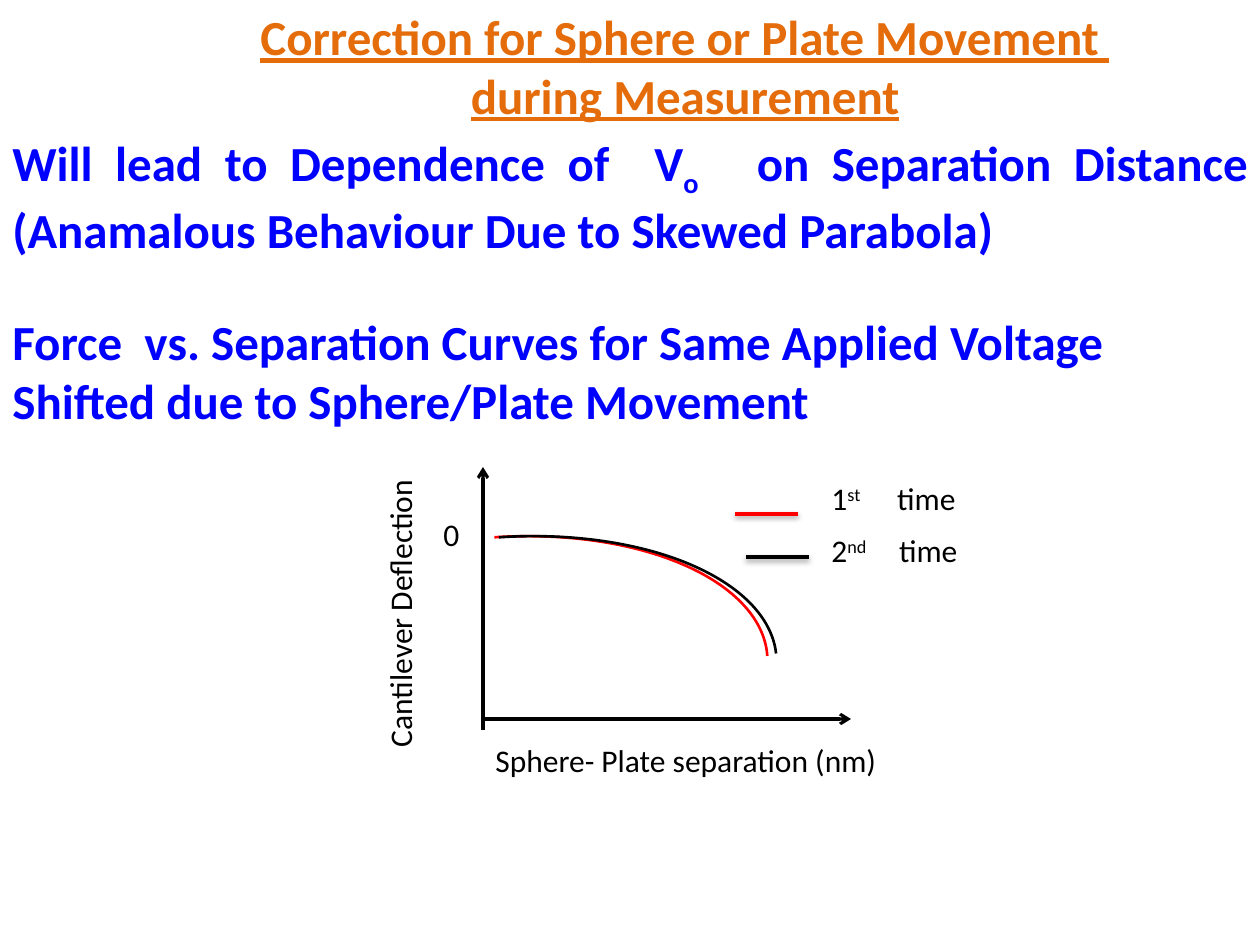
from lxml.etree import SubElement
from pptx import Presentation
from pptx.dml.color import RGBColor
from pptx.enum.shapes import MSO_CONNECTOR, MSO_SHAPE
from pptx.enum.text import MSO_ANCHOR, MSO_AUTO_SIZE, PP_ALIGN
from pptx.oxml.ns import qn
from pptx.util import Inches, Pt

ORANGE = RGBColor(0xE4, 0x6C, 0x0A)
BLUE = RGBColor(0x00, 0x00, 0xFF)
RED = RGBColor(0xFF, 0x00, 0x00)
BLACK = RGBColor(0x00, 0x00, 0x00)
WHITE = RGBColor(0xFF, 0xFF, 0xFF)
SCALE = Inches(10) / 1260


def write(box, paragraphs, size, color, bold=False, align=PP_ALIGN.LEFT, wrap=False):
    frame = box.text_frame
    frame.auto_size = MSO_AUTO_SIZE.NONE
    frame.word_wrap = wrap
    frame.vertical_anchor = MSO_ANCHOR.TOP
    for index, spans in enumerate(paragraphs):
        para = frame.add_paragraph() if index else frame.paragraphs[0]
        para.alignment = align
        for text, baseline in spans:
            span = para.add_run()
            span.text = text
            span.font.name = "Calibri"
            span.font.size = Pt(size)
            span.font.bold = bold
            span.font.color.rgb = color
            if baseline:
                span._r.get_or_add_rPr().set("baseline", str(baseline * 1000))


def draw_line(ends, color, width):
    line = slide.shapes.add_connector(
        MSO_CONNECTOR.STRAIGHT, *[round(end * SCALE) for end in ends])
    line.line.color.rgb = color
    line.line.width = Pt(width)
    effects = SubElement(line._element.spPr, qn("a:effectLst"))
    return line, effects


deck = Presentation()
deck.slide_width = Inches(10)
deck.slide_height = Inches(7.5)
slide = deck.slides.add_slide(deck.slide_layouts[5])

title = slide.shapes.title
title.left, title.top, title.width, title.height = [
    round(length * SCALE) for length in (242, 0, 886, 131)]
write(title, [[("Correction for Sphere or Plate Movement ", 0)], [("during Measurement", 0)]],
      28, ORANGE, True, PP_ALIGN.CENTER)
for para in title.text_frame.paragraphs:
    para.runs[0].font.underline = True

statements = [
    ((0, 126, 1260, 131), PP_ALIGN.JUSTIFY, True,
     [[("Will lead to Dependence of  V", 0), ("o  ", -25),
       (" on Separation Distance (Anamalous Behaviour Due to Skewed Parabola)", 0)]]),
    ((0, 305, 1140, 131), PP_ALIGN.LEFT, False,
     [[("Force  vs. Separation Curves for Same Applied Voltage", 0)],
      [("Shifted due to Sphere/Plate Movement", 0)]]),
]
for place, align, wrap, paragraphs in statements:
    box = slide.shapes.add_textbox(*[round(length * SCALE) for length in place])
    write(box, paragraphs, 28, BLUE, True, align, wrap)

curves = [((239, 537, 529, 273), RED, 270, 0), ((239, 537, 538, 275), BLACK, 270, 359.31)]
for place, color, start, end in curves:
    curve = slide.shapes.add_shape(MSO_SHAPE.ARC, *[round(length * SCALE) for length in place])
    curve.adjustments[0] = start * 0.6
    curve.adjustments[1] = end * 0.6
    curve.rotation = 356.2
    curve.shadow.inherit = False
    curve.fill.background()
    curve.line.color.rgb = color
    curve.line.width = Pt(1.5)

for ends in [(483, 719, 851, 719), (483, 730, 483, 467)]:
    axis, effects = draw_line(ends, BLACK, 1.75)
    SubElement(axis.line._get_or_add_ln(), qn("a:tailEnd"), type="arrow")

for ends, color in [((735, 514, 798, 514), RED), ((746, 557, 809, 557), BLACK)]:
    key, effects = draw_line(ends, color, 2)
    shadow = SubElement(effects, qn("a:outerShdw"), blurRad="40000", dist="20000",
                        dir="5400000", rotWithShape="0")
    shade = SubElement(shadow, qn("a:srgbClr"), val="000000")
    SubElement(shade, qn("a:alpha"), val="38000")

labels = [
    ((431, 509, 42, 50), [("0", 0)]),
    ((483, 735, 411, 50), [("Sphere- Plate separation (nm)", 0)]),
    ((819, 473, 184, 50), [("1", 0), ("st  ", 30), ("    time", 0)]),
    ((819, 525, 186, 50), [("2", 0), ("nd ", 30), ("    time", 0)]),
]
for place, spans in labels:
    box = slide.shapes.add_textbox(*[round(length * SCALE) for length in place])
    write(box, [spans], 18, BLACK)

axis_title = slide.shapes.add_shape(
    MSO_SHAPE.RECTANGLE, *[round(length * SCALE) for length in (246, 581, 307, 50)])
axis_title.rotation = 270
axis_title.shadow.inherit = False
axis_title.fill.solid()
axis_title.fill.fore_color.rgb = WHITE
axis_title.line.fill.background()
write(axis_title, [[("Cantilever Deflection", 0)]], 18, BLACK)

deck.save("out.pptx")
